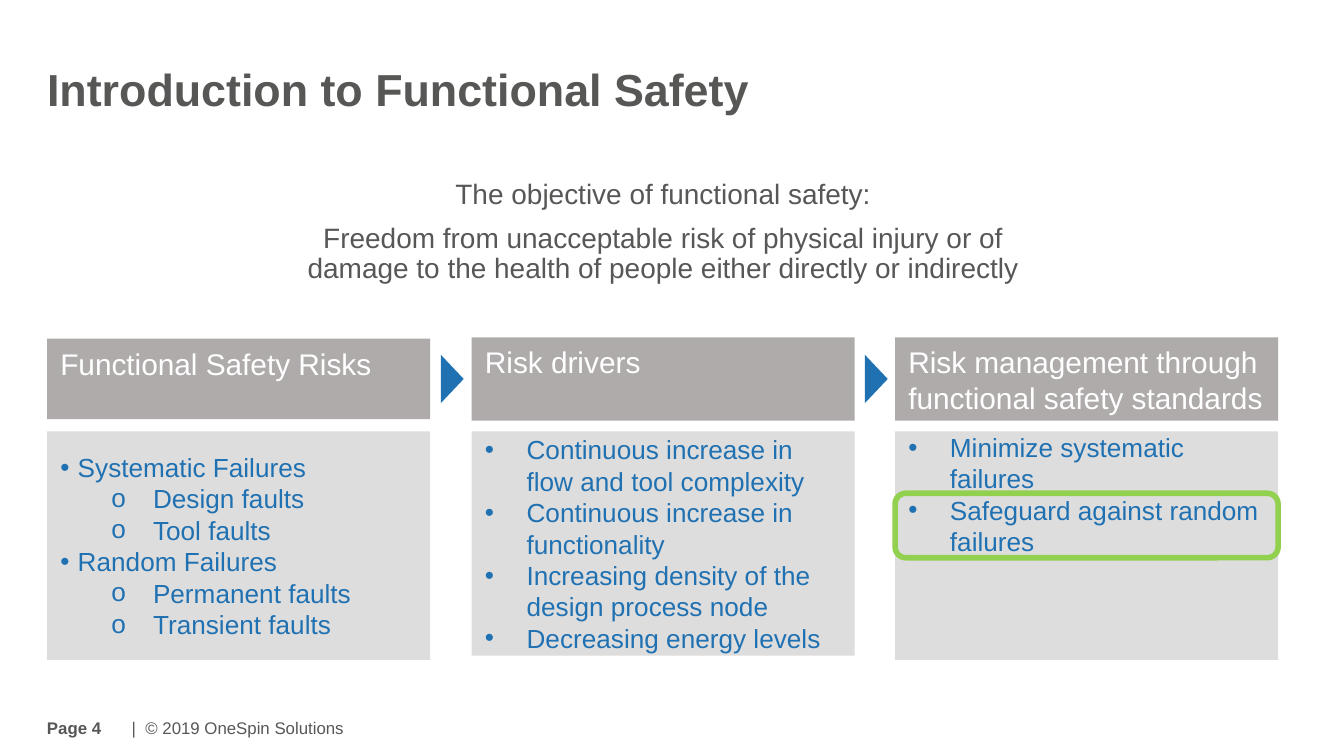
import pptx
import pptx.dml.color
import pptx.enum.shapes
import pptx.enum.text
import pptx.util
from lxml import etree
from pptx.oxml.ns import qn

Inches, Pt = pptx.util.Inches, pptx.util.Pt
RGBColor = pptx.dml.color.RGBColor
SHAPE = pptx.enum.shapes.MSO_SHAPE
ANCHOR = pptx.enum.text.MSO_ANCHOR
ALIGN = pptx.enum.text.PP_ALIGN

TEXT = RGBColor(0x57, 0x57, 0x56)
BLUE = RGBColor(0x20, 0x71, 0xB2)
WHITE = RGBColor(0xFF, 0xFF, 0xFF)
HEAD_GREY = RGBColor(0xAF, 0xAB, 0xAB)
BODY_GREY = RGBColor(0xDD, 0xDD, 0xDD)
GREEN = RGBColor(0x92, 0xD0, 0x50)

TITLE = "Introduction to Functional Safety"
OBJECTIVE = [
    "The objective of functional safety:",
    "Freedom from unacceptable risk of physical injury or of damage to the "
    "health of people either directly or indirectly",
]
# Bullet styles: level, character, left margin, hanging indent
MAIN = (0, "•", 0.13, 0.13)
SUB = (1, "o", 0.69, 0.31)
POINT = (0, "•", 0.31, 0.31)
COLUMNS = [
    dict(left=0.35, head="Functional Safety Risks", head_top=2.52, head_height=0.6,
         body_height=1.7, anchor=ANCHOR.MIDDLE, items=[
             (MAIN, "Systematic Failures"),
             (SUB, "Design faults"),
             (SUB, "Tool faults"),
             (MAIN, "Random Failures"),
             (SUB, "Permanent faults"),
             (SUB, "Transient faults")]),
    dict(left=3.51, head="Risk drivers", head_top=2.51, head_height=0.62,
         body_height=1.67, anchor=ANCHOR.MIDDLE, items=[
             (POINT, "Continuous increase in flow and tool complexity"),
             (POINT, "Continuous increase in functionality"),
             (POINT, "Increasing density of the design process node"),
             (POINT, "Decreasing energy levels")]),
    dict(left=6.66, head="Risk management through functional safety standards",
         head_top=2.51, head_height=0.62,
         body_height=1.7, anchor=ANCHOR.TOP, items=[
             (POINT, "Minimize systematic failures"),
             (POINT, "Safeguard against random failures")]),
]
COL_WIDTH = 2.85
BODY_TOP = 3.21
ARROW_WIDTH, ARROW_HEIGHT, ARROW_MIDDLE = 0.36, 0.17, 2.82


def set_frame(tf, side=0, top=0, bottom=0, anchor=ANCHOR.TOP):
    tf.word_wrap = True
    tf.margin_left = tf.margin_right = Inches(side)
    tf.margin_top, tf.margin_bottom = Inches(top), Inches(bottom)
    tf.vertical_anchor = anchor


def write(p, text, size, color, bold=False, align=ALIGN.LEFT):
    p.alignment = align
    r = p.add_run()
    r.text = text
    r.font.name, r.font.size, r.font.bold = "Arial", Pt(size), bold
    r.font.color.rgb = color


def paragraphs(tf, count):
    return [tf.paragraphs[0]] + [tf.add_paragraph() for _ in range(count - 1)]


def add_text(s, box, lines, size, bold=False, align=ALIGN.LEFT):
    tf = s.shapes.add_textbox(*map(Inches, box)).text_frame
    set_frame(tf)
    ps = paragraphs(tf, len(lines))
    for p, line in zip(ps, lines):
        write(p, line, size, TEXT, bold, align)
    return ps


def add_filled(s, kind, box, color):
    sp = s.shapes.add_shape(kind, *map(Inches, box))
    sp.shadow.inherit = False
    sp.fill.solid()
    sp.fill.fore_color.rgb = color
    sp.line.fill.background()
    return sp


def set_bullet(p, style):
    level, char, margin, hanging = style
    p.level = level
    pPr = p._p.get_or_add_pPr()
    pPr.set("marL", str(Inches(margin)))
    pPr.set("indent", str(-Inches(hanging)))
    etree.SubElement(pPr, qn("a:buFont")).set("typeface", "Arial")
    etree.SubElement(pPr, qn("a:buChar")).set("char", char)


def add_column(s, col):
    head = (col["left"], col["head_top"], COL_WIDTH, col["head_height"])
    tf = add_filled(s, SHAPE.RECTANGLE, head, HEAD_GREY).text_frame
    set_frame(tf, 0.1, 0.05, 0.04)
    write(tf.paragraphs[0], col["head"], 16, WHITE)

    body = (col["left"], BODY_TOP, COL_WIDTH, col["body_height"])
    tf = add_filled(s, SHAPE.RECTANGLE, body, BODY_GREY).text_frame
    inset = 0 if col["anchor"] == ANCHOR.TOP else 0.04
    set_frame(tf, 0.1, inset, inset, col["anchor"])
    for p, (style, text) in zip(paragraphs(tf, len(col["items"])), col["items"]):
        set_bullet(p, style)
        write(p, text, 14, BLUE)


def add_arrow(s, before, after):
    """Put a right-pointing triangle in the gap between two columns."""
    middle = (before["left"] + COL_WIDTH + after["left"]) / 2 + 0.01
    box = (middle - ARROW_WIDTH / 2, ARROW_MIDDLE - ARROW_HEIGHT / 2,
           ARROW_WIDTH, ARROW_HEIGHT)
    add_filled(s, SHAPE.ISOSCELES_TRIANGLE, box, BLUE).rotation = 90


def main():
    prs = pptx.Presentation()
    prs.slide_width = Inches(10)
    prs.slide_height = prs.slide_width * 9 // 16
    s = prs.slides.add_slide(prs.slide_layouts[6])

    add_text(s, (0.98, 5.34, 4.28, 0.16), ["|  © 2019 OneSpin Solutions"], 9)
    add_text(s, (0.35, 5.34, 0.7, 0.16), ["Page 4"], 9, bold=True)
    title = add_text(s, (0.35, 0.51, 6.95, 0.34), [TITLE], 24, bold=True)
    title[0].line_spacing = Pt(25)

    objective = add_text(s, (2.02, 1.34, 5.83, 0.81), OBJECTIVE, 15, align=ALIGN.CENTER)
    for p in objective:
        p.line_spacing = 0.9
    objective[1].space_before = Pt(7.5)

    for col in COLUMNS:
        add_column(s, col)
    for before, after in zip(COLUMNS, COLUMNS[1:]):
        add_arrow(s, before, after)

    highlight = add_filled(s, SHAPE.ROUNDED_RECTANGLE,
                           (COLUMNS[-1]["left"], 3.67, COL_WIDTH, 0.48), WHITE)
    highlight.fill.background()
    highlight.line.color.rgb = GREEN
    highlight.line.width = Pt(3)
    prs.save("out.pptx")


if __name__ == "__main__":
    main()
